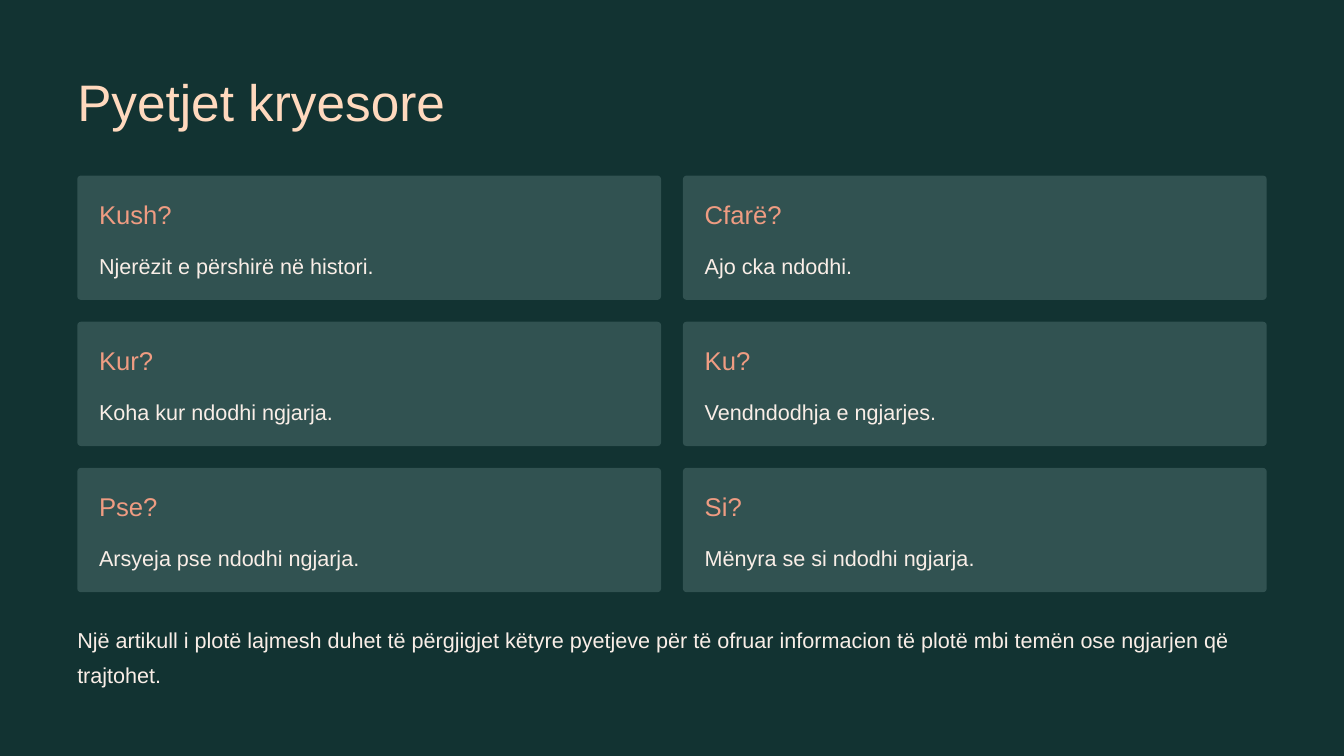
from dataclasses import dataclass

from pptx import Presentation
from pptx.dml.color import RGBColor
from pptx.enum.shapes import MSO_SHAPE
from pptx.util import Inches, Pt


@dataclass(frozen=True)
class Theme:
    font: str = "Arial"
    background: str = "123332"
    card: str = "315251"
    # Text styles: size, line spacing, colour
    title: tuple = (44, 55, "FFD9BE")
    heading: tuple = (22, 27.5, "EF9C82")
    body: tuple = (18.5, 30, "F9EEE7")


class SlideBuilder:
    def __init__(self, slide, theme):
        self.slide = slide
        self.theme = theme

    def background(self):
        fill = self.slide.background.fill
        fill.solid()
        fill.fore_color.rgb = RGBColor.from_string(self.theme.background)

    def text(self, text, style, left, top, width, height):
        size, spacing, color = style
        box = self.slide.shapes.add_textbox(
            Inches(left), Inches(top), Inches(width), Inches(height))
        tf = box.text_frame
        tf.word_wrap = True
        tf.margin_left = tf.margin_top = tf.margin_right = tf.margin_bottom = 0
        p = tf.paragraphs[0]
        p.text = text
        p.line_spacing = Pt(spacing)
        p.font.name = self.theme.font
        p.font.size = Pt(size)
        p.font.color.rgb = RGBColor.from_string(color)

    def card(self, heading, body, left, top, width, height):
        sp = self.slide.shapes.add_shape(
            MSO_SHAPE.ROUNDED_RECTANGLE,
            Inches(left), Inches(top), Inches(width), Inches(height))
        sp.adjustments[0] = 0.03
        sp.shadow.inherit = False
        sp.fill.solid()
        sp.fill.fore_color.rgb = RGBColor.from_string(self.theme.card)
        sp.line.fill.background()
        pad = 0.26
        inner = width - 2 * pad
        self.text(heading, self.theme.heading, left + pad, top + pad, inner, 0.38)
        self.text(body, self.theme.body, left + pad, top + 0.81, inner, 0.42)


QUESTIONS = [
    ("Kush?", "Njerëzit e përshirë në histori."),
    ("Cfarë?", "Ajo cka ndodhi."),
    ("Kur?", "Koha kur ndodhi ngjarja."),
    ("Ku?", "Vendndodhja e ngjarjes."),
    ("Pse?", "Arsyeja pse ndodhi ngjarja."),
    ("Si?", "Mënyra se si ndodhi ngjarja."),
]
MARGIN = 0.92
CARDS_TOP = 2.09
CARD_W, CARD_H = 6.95, 1.48
GAP = 0.26


def main():
    prs = Presentation()
    prs.slide_width, prs.slide_height = Inches(16), Inches(9)
    theme = Theme()
    s = SlideBuilder(prs.slides.add_slide(prs.slide_layouts[6]), theme)

    # Background and title
    s.background()
    s.text("Pyetjet kryesore", theme.title, MARGIN, 0.8, 6.16, 0.77)

    # Question cards in two columns
    for i, (heading, body) in enumerate(QUESTIONS):
        row, col = divmod(i, 2)
        s.card(heading, body, MARGIN + col * (CARD_W + GAP),
               CARDS_TOP + row * (CARD_H + GAP), CARD_W, CARD_H)

    # Closing remark
    s.text("Një artikull i plotë lajmesh duhet të përgjigjet këtyre pyetjeve "
           "për të ofruar informacion të plotë mbi temën ose ngjarjen që "
           "trajtohet.", theme.body, MARGIN, 7.36, 2 * CARD_W + GAP, 0.84)

    prs.save("out.pptx")


if __name__ == "__main__":
    main()
